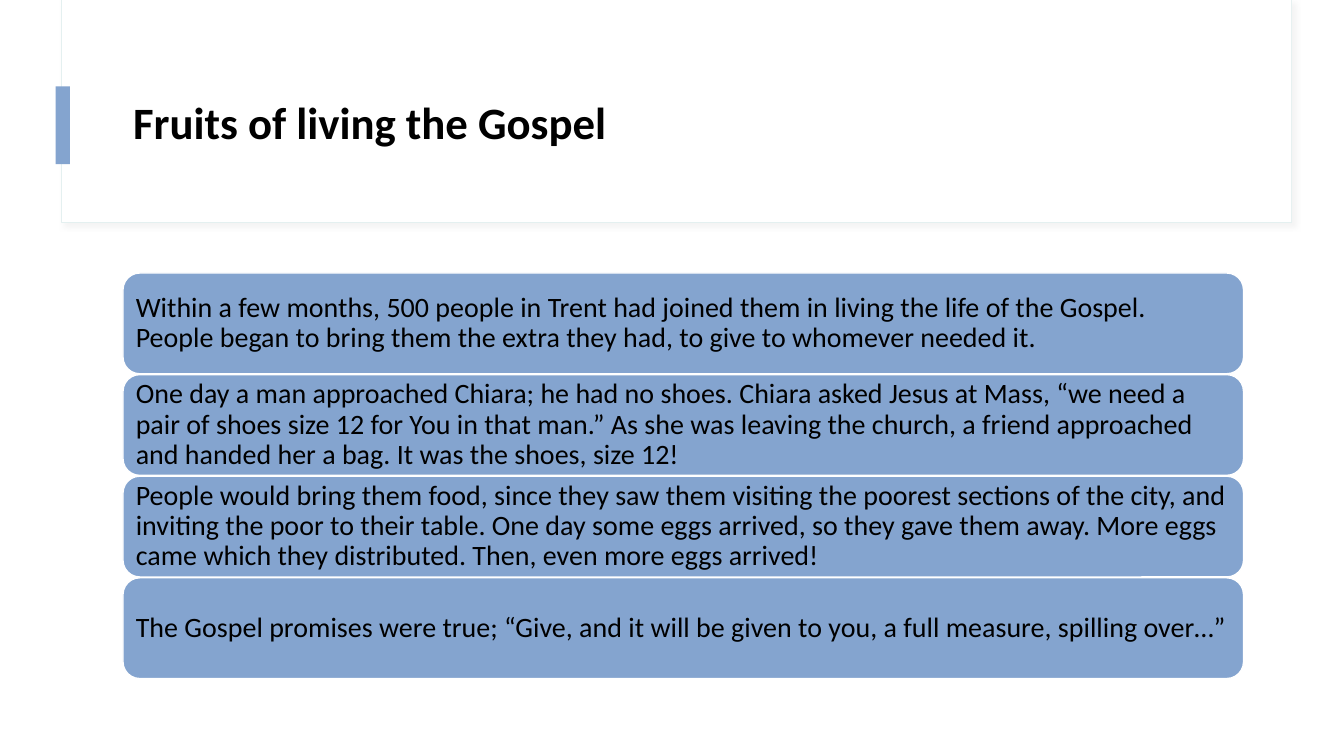
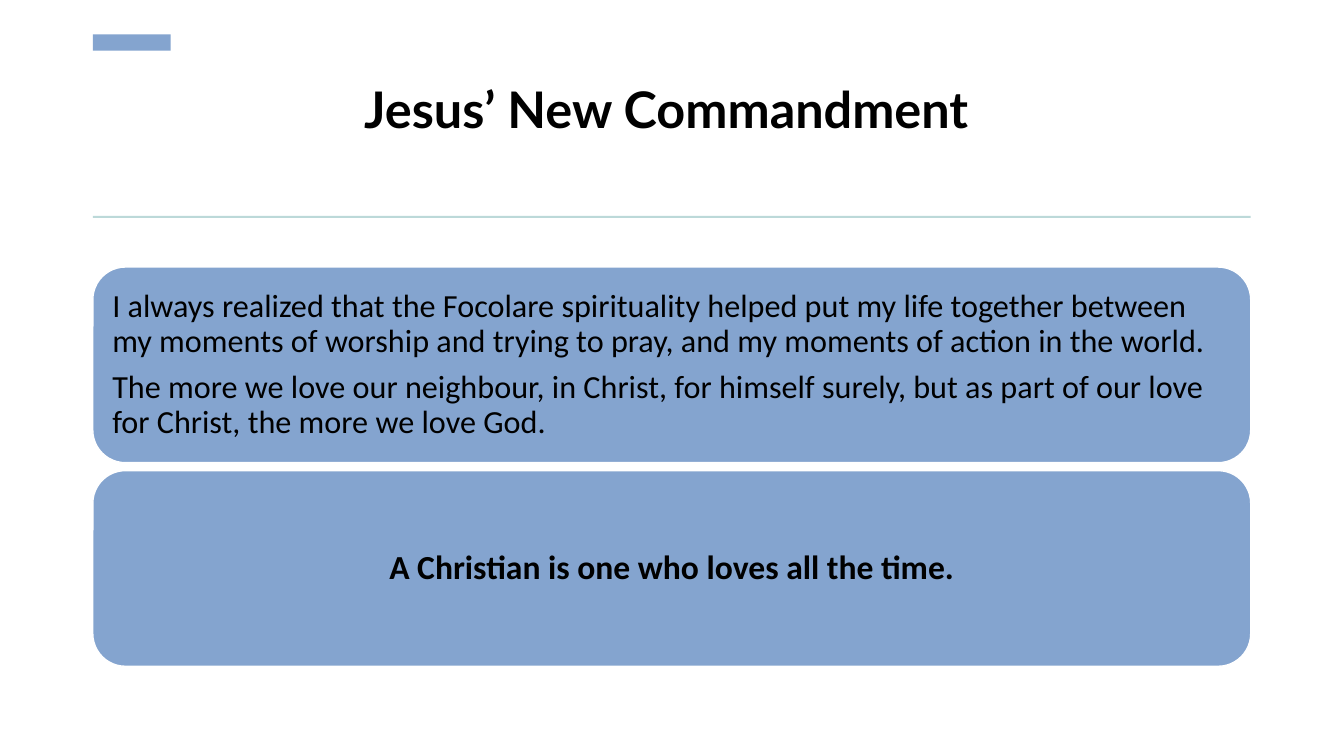
from lxml.etree import SubElement
from pptx import Presentation
from pptx.dml.color import RGBColor
from pptx.enum.shapes import MSO_SHAPE
from pptx.enum.text import MSO_ANCHOR, MSO_AUTO_SIZE, PP_ALIGN
from pptx.oxml.ns import qn
from pptx.util import Cm, Pt

HUES = {"card": "84A4CF", "edge": "E4F0F0", "rule": "BCD9D9",
        "shade": "D9D9D9", "paper": "FFFFFF", "ink": "000000"}


class Deck:
    """Hold the shared style and the current slide."""

    def __init__(self):
        self.show = Presentation()
        self.show.slide_width = Cm(33.87)
        self.show.slide_height = Cm(19.05)
        self.slide = None

    def hue(self, name):
        return RGBColor.from_string(HUES[name])

    def begin(self):
        self.slide = self.show.slides.add_slide(self.show.slide_layouts[5])

    def label(self, frame, lines, size, font="Calibri", bold=False,
              align=PP_ALIGN.LEFT, after=0):
        frame.word_wrap = True
        frame.auto_size = MSO_AUTO_SIZE.NONE
        frame.text = "\n".join(lines)
        for para in frame.paragraphs:
            para.alignment = align
            para.line_spacing = 0.9
            para.space_after = Pt(after)
            para.font.name = font
            para.font.size = Pt(size)
            para.font.bold = bold
            para.font.color.rgb = self.hue("ink")

    def title(self, text, box, size, anchor=MSO_ANCHOR.MIDDLE, foot=0.13, **style):
        title = self.slide.shapes.title
        title.left, title.top, title.width, title.height = map(Cm, box)
        title.element.getparent().append(title.element)
        frame = title.text_frame
        frame.vertical_anchor = anchor
        frame.margin_bottom = Cm(foot)
        self.label(frame, [text], size, bold=True, **style)

    def block(self, box, fill, line=None, width=0.75, kind=MSO_SHAPE.RECTANGLE):
        shape = self.slide.shapes.add_shape(kind, *map(Cm, box))
        shape.shadow.inherit = False
        shape.fill.solid()
        shape.fill.fore_color.rgb = self.hue(fill)
        if line:
            shape.line.color.rgb = self.hue(line)
            shape.line.width = Pt(width)
        else:
            shape.line.fill.background()
        return shape

    def panel(self):
        back = self.block((1.55, 0, 31, 5.61), "paper", "edge")
        glow = back.element.spPr.find(qn("a:effectLst"))
        cast = SubElement(glow, qn("a:outerShdw"), blurRad=str(Pt(4)),
                          dist=str(Pt(3)), dir="2700000", rotWithShape="0")
        tint = SubElement(cast, qn("a:srgbClr"), val=HUES["shade"])
        SubElement(tint, qn("a:alpha"), val="30000")
        self.block((1.57, 0, 30.97, 5.59), "paper")

    def card(self, box, lines, size, inset, **style):
        shape = self.block(box, "card", "paper", 1, MSO_SHAPE.ROUNDED_RECTANGLE)
        frame = shape.text_frame
        frame.vertical_anchor = MSO_ANCHOR.MIDDLE
        frame.margin_left = frame.margin_right = Cm(inset)
        frame.margin_top = frame.margin_bottom = Cm(inset)
        self.label(frame, lines, size, after=0.35 * size, **style)

    def stack(self, box, step, cards, inset):
        left, top, width, height = box
        for row, (lines, size, style) in enumerate(cards):
            self.card((left, top + row * step, width, height),
                      lines, size, inset, **style)


FRUITS = [
    "Within a few months, 500 people in Trent had joined them in living the "
    "life of the Gospel. People began to bring them the extra they had, to "
    "give to whomever needed it.",
    "One day a man approached Chiara; he had no shoes. Chiara asked Jesus at "
    "Mass, “we need a pair of shoes size 12 for You in that man.” As she was "
    "leaving the church, a friend approached and handed her a bag. It was the "
    "shoes, size 12!",
    "People would bring them food, since they saw them visiting the poorest "
    "sections of the city, and inviting the poor to their table. One day some "
    "eggs arrived, so they gave them away. More eggs came which they "
    "distributed. Then, even more eggs arrived!",
    "The Gospel promises were true; “Give, and it will be given to you, a "
    "full measure, spilling over…”",
]
LOVE = [
    "I always realized that the Focolare spirituality helped put my life "
    "together between my moments of worship and trying to pray, and my "
    "moments of action in the world.",
    "The more we love our neighbour, in Christ, for himself surely, but as "
    "part of our love for Christ, the more we love God.",
]
CREED = ["A Christian is one who loves all the time."]


def main():
    deck = Deck()
    mid = {"align": PP_ALIGN.CENTER}

    deck.begin()
    deck.panel()
    deck.block((1.4, 2.18, 0.36, 1.96), "card")
    deck.title("Fruits of living the Gospel", (3.1, 1.52, 28.24, 3.28), 32)
    deck.stack((3.1, 6.88, 28.24, 2.54), 2.56,
               [([text], 20, {}) for text in FRUITS], 0.2)

    deck.begin()
    deck.block((2.34, 0.87, 1.96, 0.41), "card")
    deck.block((2.34, 5.44, 29.18, 0.05), "rule")
    deck.title("Jesus’ New Commandment", (2.2, 1.9, 29.18, 3.23), 36,
               MSO_ANCHOR.BOTTOM, 1.61, font="Lato", **mid)
    deck.stack((2.34, 6.73, 29.18, 4.93), 5.13,
               [(LOVE, 23, {}), (CREED, 24, {"bold": True, **mid})], 0.25)

    deck.show.save("out.pptx")


if __name__ == "__main__":
    main()
